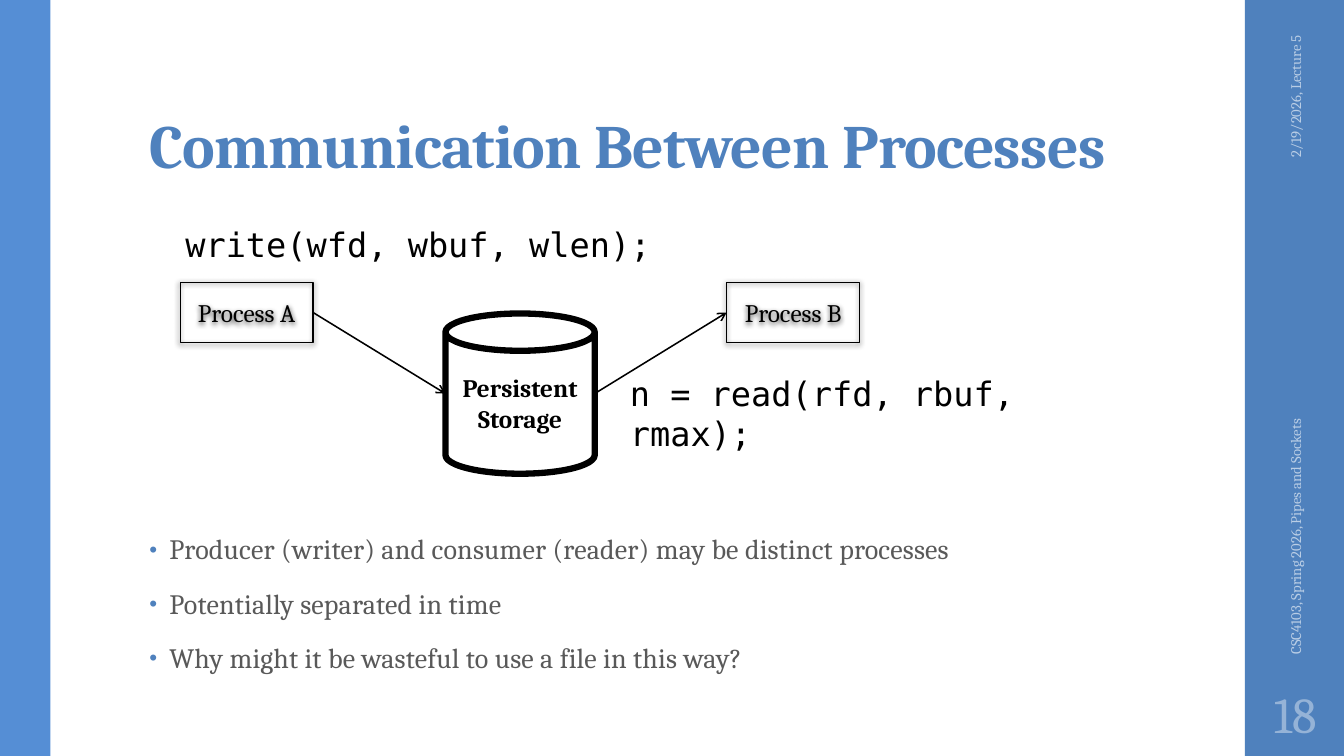
"""Build the slide on communication between processes through persistent storage."""
from dataclasses import dataclass, field
from typing import Any

from lxml.etree import SubElement
from pptx import Presentation
from pptx.dml.color import RGBColor
from pptx.enum.shapes import MSO_CONNECTOR, MSO_SHAPE
from pptx.enum.text import MSO_ANCHOR, MSO_AUTO_SIZE, PP_ALIGN
from pptx.oxml.ns import qn
from pptx.util import Pt

BLACK = RGBColor(0x00, 0x00, 0x00)
WHITE = RGBColor(0xFF, 0xFF, 0xFF)
BLUE = RGBColor(0x4F, 0x81, 0xBD)
SKY = RGBColor(0x55, 0x8E, 0xD5)
GREY = RGBColor(0x59, 0x59, 0x59)
PALE = RGBColor(0xB9, 0xCD, 0xE5)
SOFT = RGBColor(0x95, 0xB3, 0xD7)
SERIF, MONO = "Cambria", "DejaVu Sans Mono"

BULLETS = (
    "Producer (writer) and consumer (reader) may be distinct processes",
    "Potentially separated in time",
    "Why might it be wasteful to use a file in this way?",
)


@dataclass
class Style:
    """Hold the look of a text."""
    size: float
    color: RGBColor
    name: str = SERIF
    bold: bool = False
    spacing: int = 0


@dataclass
class Label:
    """Describe a text box."""
    text: str
    box: tuple
    style: Style
    paragraph: dict = field(default_factory=dict)
    frame: dict = field(default_factory=dict)
    rotation: float = 0


@dataclass
class Block:
    """Describe a preset shape."""
    kind: MSO_SHAPE
    box: tuple
    fill: RGBColor | None = None
    line: float = 0
    text: str = ""
    bold: bool = False
    shadow: bool = False


MIDDLE = {"vertical_anchor": MSO_ANCHOR.MIDDLE}
GROW = {"auto_size": MSO_AUTO_SIZE.SHAPE_TO_FIT_TEXT}
TIGHT = {f"margin_{side}": Pt(3.6) for side in ("left", "top", "right", "bottom")}
SMALL = Style(10.5, PALE)
CODE = Style(24, BLACK, MONO)

BANDS = (
    Block(MSO_SHAPE.RECTANGLE, (889.2, 0, 72, 540), BLUE),
    Block(MSO_SHAPE.RECTANGLE, (0, 0, 36, 540), SKY),
)
PROCESSES = tuple(
    Block(MSO_SHAPE.RECTANGLE, (left, 201.6, 95, 43.2), line=0.75, text=text, shadow=True)
    for left, text in ((128.6, "Process A"), (519.1, "Process B"))
)
STORAGE = Block(MSO_SHAPE.CAN, (318.2, 223.9, 106.6, 114.5), WHITE, 4.5, "Persistent Storage", True)
LABELS = (
    Label("2/19/2026, Lecture 5", (850.3, 78.5, 149.8, 28.8), SMALL,
          {"alignment": PP_ALIGN.RIGHT}, MIDDLE, 270),
    Label("CSC4103, Spring 2026, Pipes and Sockets", (784.1, 319, 282.2, 28.8), SMALL,
          frame=MIDDLE, rotation=270),
    Label("18", (889.2, 486, 72, 46.8), Style(36, SOFT),
          {"alignment": PP_ALIGN.CENTER}, {**MIDDLE, **TIGHT}),
    Label("write(wfd, wbuf, wlen);", (125.3, 156.2, 367.9, 36), CODE, frame=GROW),
    Label("n = read(rfd, rbuf, rmax);", (442.8, 262.8, 363.6, 36), CODE, frame=GROW),
)


def assign(target: Any, values: dict) -> None:
    """Set every attribute named in the dict."""
    for name, value in values.items():
        setattr(target, name, value)


def place(s: Any, box: tuple) -> None:
    """Move a shape to a box given in points."""
    assign(s, dict(zip(("left", "top", "width", "height"), map(Pt, box))))


def write(p: Any, text: str, style: Style) -> None:
    """Add a styled run to a paragraph."""
    r = p.add_run()
    r.text = text
    assign(r.font, {"name": style.name, "size": Pt(style.size), "bold": style.bold})
    r.font.color.rgb = style.color
    if style.spacing:
        r.font._element.set("spc", str(style.spacing))


def add_label(slide: Any, label: Label) -> None:
    """Draw a text box."""
    s = slide.shapes.add_textbox(*map(Pt, label.box))
    s.rotation = label.rotation
    tf = s.text_frame
    assign(tf, {"word_wrap": True, **label.frame})
    p = tf.paragraphs[0]
    assign(p, label.paragraph)
    write(p, label.text, label.style)


def add_shadow(s: Any) -> None:
    """Give a shape a soft shadow below."""
    effects = s._element.spPr.find(qn("a:effectLst"))
    shadow = SubElement(effects, qn("a:outerShdw"), blurRad=str(Pt(4)), dist=str(Pt(1.2)),
                        dir="5400000", rotWithShape="0")
    color = SubElement(shadow, qn("a:srgbClr"), val=str(BLACK))
    SubElement(color, qn("a:alpha"), val="75000")


def add_block(slide: Any, block: Block) -> Any:
    """Draw a preset shape with its text."""
    s = slide.shapes.add_shape(block.kind, *map(Pt, block.box))
    s.shadow.inherit = False
    if block.fill is None:
        s.fill.background()
    else:
        s.fill.solid()
        s.fill.fore_color.rgb = block.fill
    if block.line:
        s.line.color.rgb = BLACK
        s.line.width = Pt(block.line)
    else:
        s.line.fill.background()
    if block.shadow:
        add_shadow(s)
    if block.text:
        assign(s.text_frame, {"word_wrap": True, **MIDDLE})
        p = s.text_frame.paragraphs[0]
        p.alignment = PP_ALIGN.CENTER
        write(p, block.text, Style(18, BLACK, bold=block.bold))
    return s


def add_arrow(slide: Any, start: tuple, end: tuple) -> Any:
    """Draw a straight arrow between two points."""
    s = slide.shapes.add_connector(MSO_CONNECTOR.STRAIGHT, *map(Pt, start + end))
    s.line.color.rgb = BLACK
    s.line.width = Pt(1.1)
    SubElement(s.line._get_or_add_ln(), qn("a:tailEnd"), type="arrow")
    SubElement(s._element.spPr, qn("a:effectLst"))
    return s


def fill_title(s: Any) -> None:
    """Format and fill the title placeholder."""
    place(s, (99.4, 23, 763.2, 110.2))
    tf = s.text_frame
    assign(tf, {"word_wrap": True, "auto_size": MSO_AUTO_SIZE.NONE, "margin_top": Pt(2.2),
                "vertical_anchor": MSO_ANCHOR.BOTTOM})
    p = tf.paragraphs[0]
    assign(p, {"alignment": PP_ALIGN.LEFT, "line_spacing": 0.9})
    write(p, "Communication Between Processes", Style(44, BLUE, bold=True, spacing=-50))


def fill_body(s: Any) -> None:
    """Format and fill the list placeholder."""
    place(s, (99.4, 378, 676.8, 108.7))
    tf = s.text_frame
    assign(tf, {"word_wrap": True, "auto_size": MSO_AUTO_SIZE.NONE})
    for i, text in enumerate(BULLETS):
        p = tf.add_paragraph() if i else tf.paragraphs[0]
        assign(p, {"line_spacing": 0.95, "space_before": Pt(14 if i else 0), "space_after": Pt(2)})
        pPr = p._p.get_or_add_pPr()
        pPr.set("marL", str(Pt(14.4)))
        pPr.set("indent", str(Pt(-14.4)))
        SubElement(SubElement(pPr, qn("a:buClr")), qn("a:srgbClr"), val=str(BLUE))
        SubElement(pPr, qn("a:buSzPct"), val="80000")
        SubElement(pPr, qn("a:buChar"), char="•")
        write(p, text, Style(20, GREY, spacing=10))


def main() -> None:
    """Build and save the slide."""
    prs = Presentation()
    assign(prs, {"slide_width": Pt(960), "slide_height": Pt(540)})
    slide = prs.slides.add_slide(prs.slide_layouts[1])
    for band in BANDS:
        add_block(slide, band)
    fill_title(slide.shapes.title)
    fill_body(slide.placeholders[1])
    for label in LABELS:
        add_label(slide, label)
    writer, reader = [add_block(slide, process) for process in PROCESSES]
    left, top, width, height = STORAGE.box
    middle = top + height / 2
    add_arrow(slide, (223.6, 223.2), (left, middle)).begin_connect(writer, 3)
    add_arrow(slide, (left + width, middle), (519.1, 223.2)).end_connect(reader, 1)
    add_block(slide, STORAGE)
    prs.save("out.pptx")


if __name__ == "__main__":
    main()
